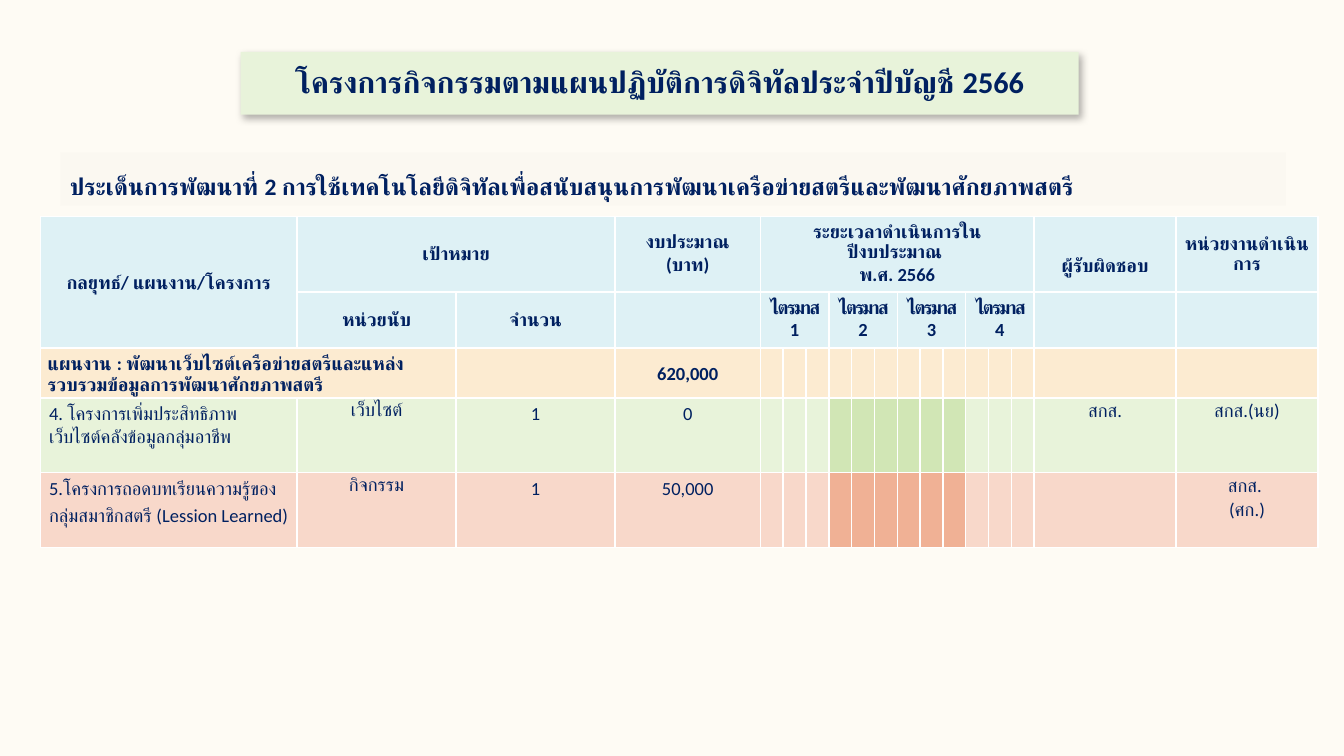
from lxml import etree
from pptx import Presentation
from pptx.dml.color import RGBColor
from pptx.enum.shapes import MSO_SHAPE
from pptx.enum.text import MSO_ANCHOR, PP_ALIGN
from pptx.oxml import parse_xml
from pptx.oxml.ns import nsdecls, qn
from pptx.util import Cm, Pt

RECT = MSO_SHAPE.RECTANGLE
TOP, MIDDLE = MSO_ANCHOR.TOP, MSO_ANCHOR.MIDDLE
LEFT, CENTER = PP_ALIGN.LEFT, PP_ALIGN.CENTER

NAVY = RGBColor(0x00, 0x20, 0x60)
WHITE = RGBColor(0xFF, 0xFF, 0xFF)
CREAM = RGBColor(0xFE, 0xFB, 0xF4)
IVORY = RGBColor(0xFB, 0xF8, 0xF1)
SKY = RGBColor(0xDE, 0xF1, 0xF5)
SAND = RGBColor(0xFC, 0xEB, 0xD1)
GREEN = RGBColor(0xE8, 0xF3, 0xDA)
GREEN_BAR = RGBColor(0xD1, 0xE6, 0xB5)
SALMON = RGBColor(0xF8, 0xD8, 0xCA)
SALMON_BAR = RGBColor(0xF0, 0xB1, 0x95)

FONT = "Calibri"
COL_WIDTHS = [5.39, 3.34, 3.34, 3.05] + [0.48] * 12 + [2.98, 2.98]
ROW_HEIGHTS = [1.58, 1.18, 1.05, 1.57, 1.57]
FIRST_MONTH, OWNER, AGENCY = 4, 16, 17
QUARTERS = [FIRST_MONTH + 3 * i for i in range(4)]
ACTIVE_MONTHS = range(QUARTERS[1], QUARTERS[3])
MERGES = [(0, 0, 1, 0), (0, 1, 0, 2), (0, FIRST_MONTH, 0, OWNER - 1), (2, 0, 2, 1)]
MERGES += [(1, c, 1, c + 2) for c in QUARTERS]

ROW_TEXTS = [
    {0: "กลยุทธ์/ แผนงาน/โครงการ", 1: "เป้าหมาย", 3: "งบประมาณ\v(บาท)",
     FIRST_MONTH: "ระยะเวลาดำเนินการในปีงบประมาณ \vพ.ศ. 2566",
     OWNER: "ผู้รับผิดชอบ", AGENCY: "หน่วยงานดำเนินการ"},
    {1: "หน่วยนับ", 2: "จำนวน",
     **{c: f"ไตรมาส {i}" for i, c in enumerate(QUARTERS, 1)}},
    {0: "แผนงาน : พัฒนาเว็บไซต์เครือข่ายสตรีและแหล่งรวบรวมข้อมูลการพัฒนาศักยภาพสตรี",
     3: "620,000"},
    {0: "4. โครงการเพิ่มประสิทธิภาพเว็บไซต์คลังข้อมูลกลุ่มอาชีพ", 1: "เว็บไซต์",
     2: "1", 3: "0", OWNER: "สกส.", AGENCY: "สกส.(นย)"},
    {0: "5.โครงการถอดบทเรียนความรู้ของกลุ่มสมาชิกสตรี (Lession Learned)",
     1: "กิจกรรม", 2: "1", 3: "50,000", AGENCY: "สกส. \v(ศก.)"},
]
ROW_FILLS = [SKY, SKY, SAND, GREEN, SALMON]
BAR_FILLS = {3: GREEN_BAR, 4: SALMON_BAR}


def format_paragraph(p, size, bold, align, spacing):
    p.alignment = align
    p.line_spacing = spacing
    p.font.name = FONT
    p.font.size = Pt(size)
    p.font.bold = bold
    p.font.color.rgb = NAVY


def fill_shape(sp, color):
    sp.fill.solid()
    sp.fill.fore_color.rgb = color
    sp.line.fill.background()


def add_title(slide, left, top, width, height):
    sp = slide.shapes.title
    sp.left, sp.top, sp.width, sp.height = left, top, width, height
    fill_shape(sp, GREEN)
    sp._element.spPr.append(parse_xml(
        f'<a:effectLst {nsdecls("a")}>'
        f'<a:outerShdw blurRad="{Pt(4.5)}" dist="{Pt(2.6)}" dir="3180000" rotWithShape="0">'
        '<a:srgbClr val="000000"><a:alpha val="30000"/></a:srgbClr>'
        '</a:outerShdw></a:effectLst>'))
    tf = sp.text_frame
    tf.text = "โครงการกิจกรรมตามแผนปฏิบัติการดิจิทัลประจำปีบัญชี 2566"
    tf.word_wrap = True
    tf.vertical_anchor = MIDDLE
    format_paragraph(tf.paragraphs[0], 18, True, CENTER, 0.9)


def add_issue_band(slide, left, top, width, height):
    sp = slide.shapes.add_shape(RECT, left, top, width, height)
    sp.shadow.inherit = False
    fill_shape(sp, IVORY)
    tf = sp.text_frame
    tf.text = ("ประเด็นการพัฒนาที่ 2 การใช้เทคโนโลยีดิจิทัลเพื่อสนับสนุน"
               "การพัฒนาเครือข่ายสตรีและพัฒนาศักยภาพสตรี")
    tf.word_wrap = True
    tf.vertical_anchor = MIDDLE
    tf.margin_left = tf.margin_right = Cm(0.2)
    tf.margin_top = tf.margin_bottom = Cm(0.1)
    format_paragraph(tf.paragraphs[0], 14, True, LEFT, 1.5)


def add_borders(cell):
    tc_pr = cell._tc.get_or_add_tcPr()
    for side in ("a:lnL", "a:lnR", "a:lnT", "a:lnB"):
        ln = etree.SubElement(tc_pr, qn(side), w=str(Pt(1)))
        fill = etree.SubElement(ln, qn("a:solidFill"))
        etree.SubElement(fill, qn("a:srgbClr"), val=str(WHITE))


def format_cell(cell, row, col):
    is_item = row in BAR_FILLS
    add_borders(cell)
    cell.fill.solid()
    active = is_item and col in ACTIVE_MONTHS
    cell.fill.fore_color.rgb = BAR_FILLS[row] if active else ROW_FILLS[row]
    cell.margin_left = cell.margin_right = Cm(0.18 if is_item else 0.15)
    cell.margin_top = cell.margin_bottom = 0
    cell.vertical_anchor = TOP if is_item else MIDDLE
    cell.text = ROW_TEXTS[row].get(col, "")
    align = LEFT if col == 0 and row >= 2 else CENTER
    spacing = 1.2 if is_item and col < FIRST_MONTH else 1.07
    p = cell.text_frame.paragraphs[0]
    format_paragraph(p, 11, not is_item, align, spacing)
    if row == 1 and col in QUARTERS:
        p.runs[0]._r.get_or_add_rPr().set("spc", "-100")


def add_plan_table(slide, left, top, width, height):
    table = slide.shapes.add_table(
        len(ROW_HEIGHTS), len(COL_WIDTHS), left, top, width, height).table
    table.first_row = table.horz_banding = False
    for column, share in zip(table.columns, COL_WIDTHS):
        column.width = int(width * share / sum(COL_WIDTHS))
    for row, share in zip(table.rows, ROW_HEIGHTS):
        row.height = int(height * share / sum(ROW_HEIGHTS))
    for row in range(len(ROW_HEIGHTS)):
        for col in range(len(COL_WIDTHS)):
            format_cell(table.cell(row, col), row, col)
    table.cell(0, OWNER).margin_top = Cm(0.5)
    for r1, c1, r2, c2 in MERGES:
        table.cell(r1, c1).merge(table.cell(r2, c2))


def main():
    prs = Presentation()
    prs.slide_width, prs.slide_height = Cm(28.22), Cm(15.88)
    slide = prs.slides.add_slide(prs.slide_layouts[5])
    slide.background.fill.solid()
    slide.background.fill.fore_color.rgb = CREAM
    add_title(slide, Cm(5.05), Cm(1.09), Cm(17.6), Cm(1.32))
    add_plan_table(slide, Cm(0.85), Cm(4.55), Cm(26.84), Cm(6.95))
    add_issue_band(slide, Cm(1.27), Cm(3.2), Cm(25.73), Cm(1.12))
    prs.save("out.pptx")


if __name__ == "__main__":
    main()
